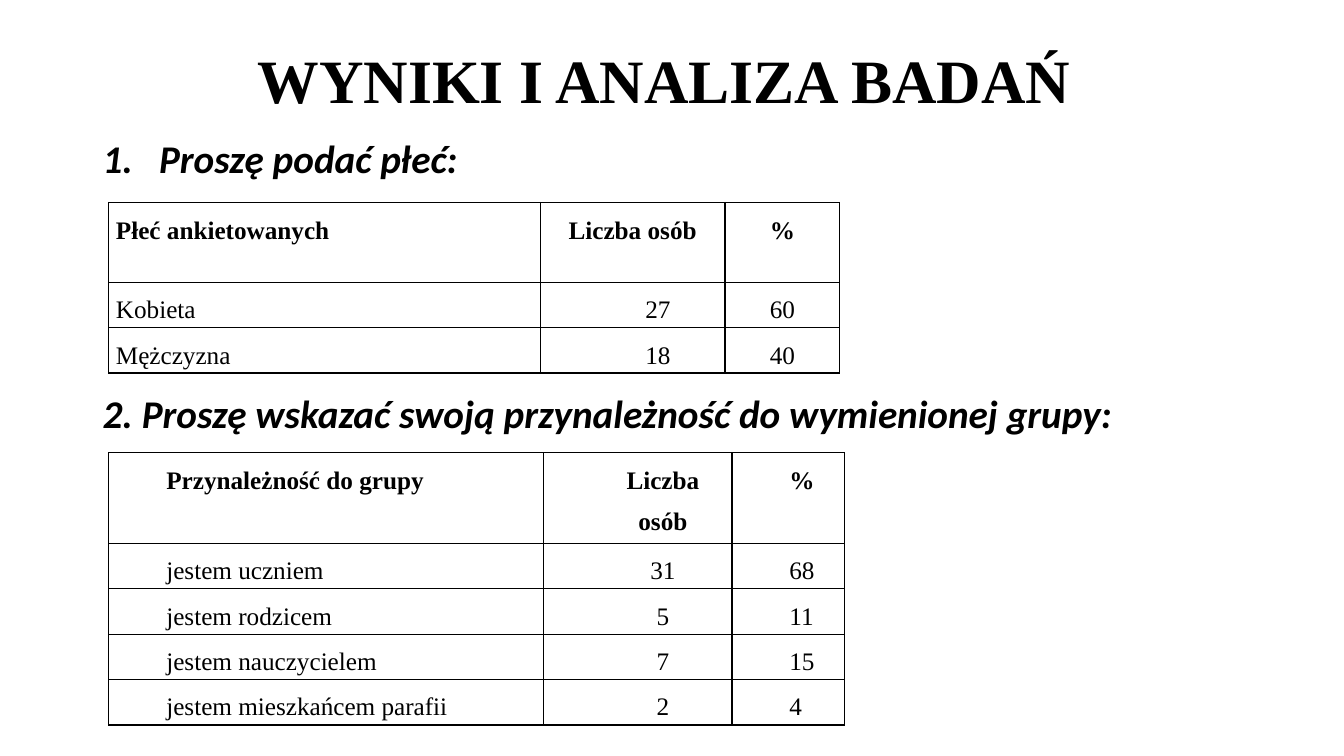
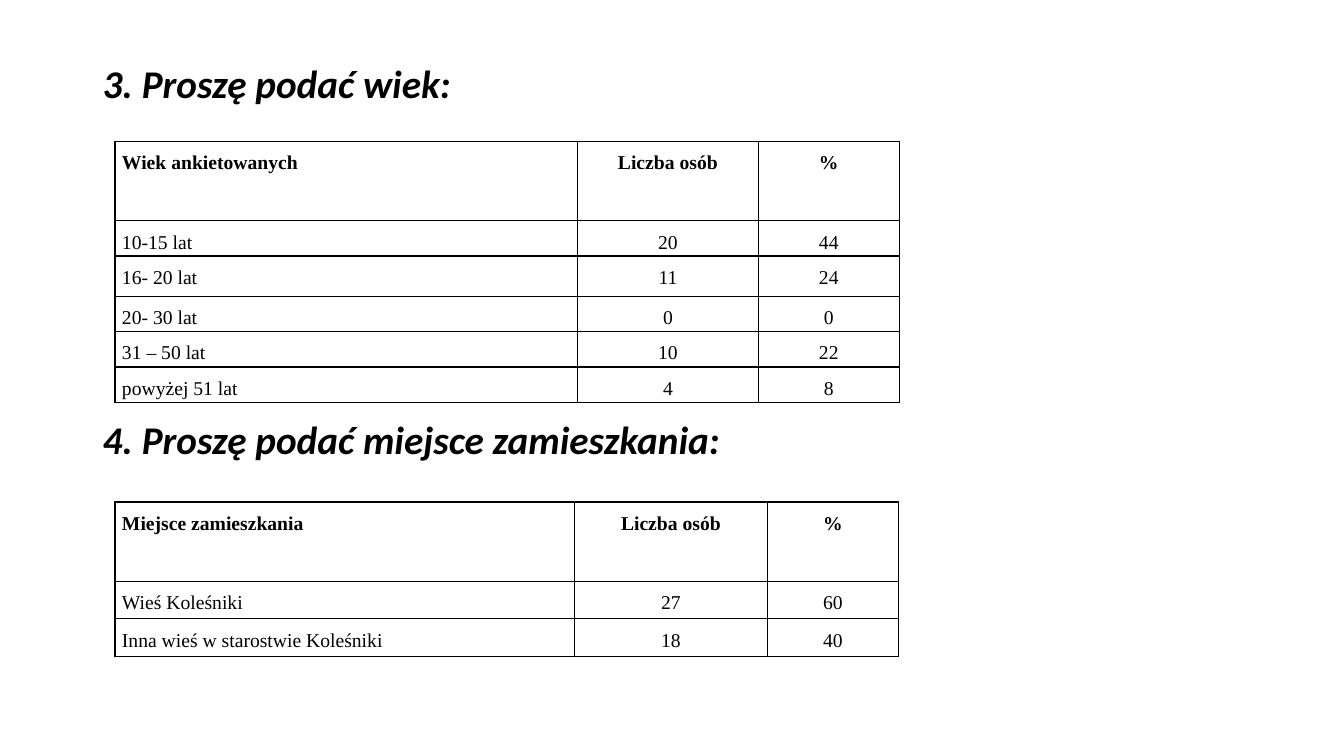
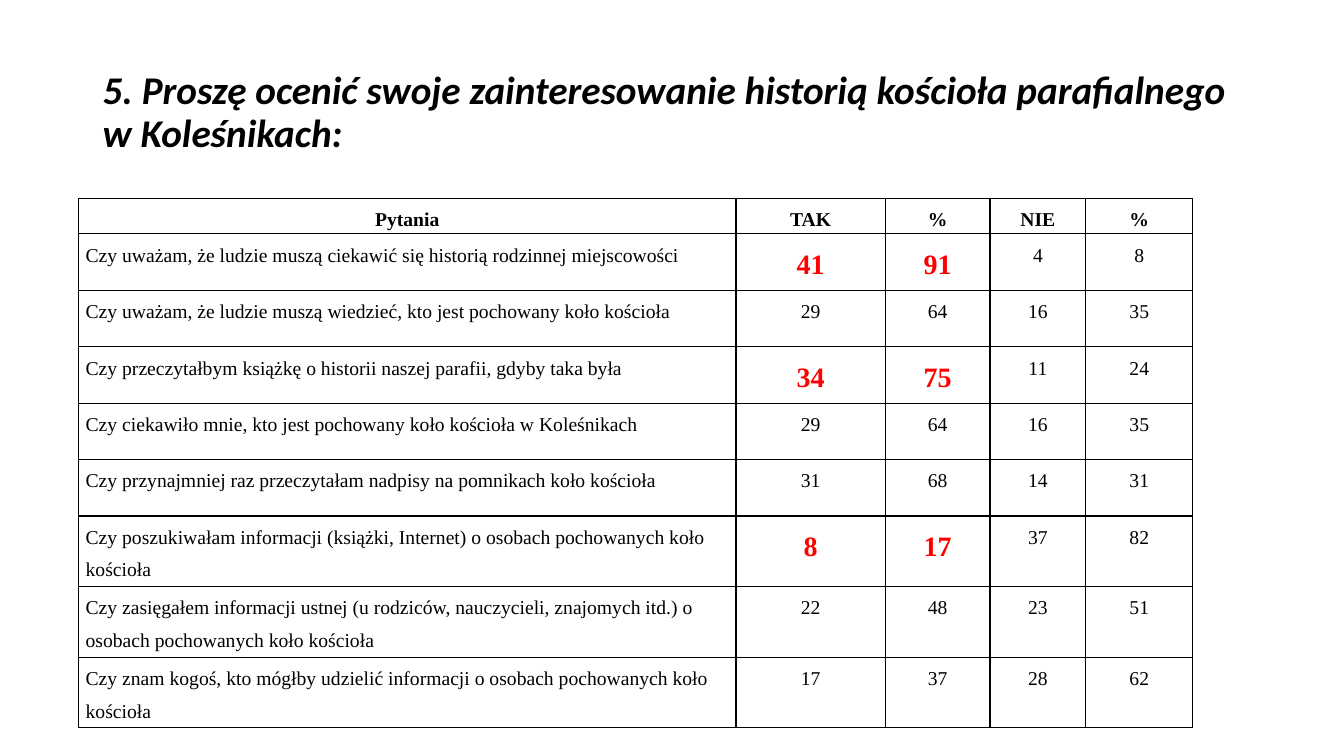
from pptx import Presentation
from pptx.dml.color import RGBColor
from pptx.enum.text import MSO_ANCHOR as Anchor, PP_ALIGN as Align
from pptx.oxml import parse_xml
from pptx.oxml.ns import nsdecls
from pptx.util import Inches, Pt

BLACK = RGBColor(0, 0, 0)
RED = RGBColor(255, 0, 0)
SERIF, SANS = "Times New Roman", "Calibri"
SIDES = {"l": Align.LEFT, "c": Align.CENTER}


class Deck:
    def __init__(self):
        self.prs = Presentation()
        self.prs.slide_width = Inches(13.33)
        self.prs.slide_height = Inches(7.5)

    def page(self):
        self.slide = self.prs.slides.add_slide(self.prs.slide_layouts[6])

    def style(self, para, face, size, color=BLACK, bold=True, slant=False):
        font = para.font
        font.name, font.size = face, Pt(size)
        font.bold, font.italic = bold, slant
        font.color.rgb = color

    def line(self, text, left, top, high):
        box = self.slide.shapes.add_textbox(
            Inches(left), Inches(top), Inches(11.5), Inches(high))
        frame = box.text_frame
        frame.word_wrap = True
        frame.vertical_anchor = Anchor.MIDDLE
        para = frame.paragraphs[0]
        para.text = text
        para.line_spacing = 0.9
        return para

    def title(self, text):
        para = self.line(text, 0.84, 0.4, 0.85)
        para.alignment = Align.CENTER
        self.style(para, SERIF, 44)

    def head(self, text, top, high=0.6, auto=False):
        para = self.line(text, 0.92, top, high)
        self.style(para, SANS, 28, slant=True)
        if auto:
            props = para._p.get_or_add_pPr()
            props.set("marL", str(Inches(0.56)))
            props.set("indent", str(-Inches(0.56)))
            mark = f'<a:buAutoNum {nsdecls("a")} type="arabicPeriod"/>'
            props.insert_element_before(parse_xml(mark), "a:defRPr")

    def edge(self, cell):
        props = cell._tc.get_or_add_tcPr()
        for side in "LRTB":
            props.append(parse_xml(
                f'<a:ln{side} {nsdecls("a")} w="12700"><a:solidFill>'
                f'<a:srgbClr val="{BLACK}"/></a:solidFill></a:ln{side}>'))
        cell.fill.background()

    def cell(self, cell, text, side, size, color, bold, pad):
        cell.margin_left = cell.margin_right = Inches(0.07)
        cell.margin_top = cell.margin_bottom = 0
        self.edge(cell)
        para = cell.text_frame.paragraphs[0]
        para.text = text
        para.alignment = SIDES[side]
        para.line_spacing = 1.5
        if pad:
            para._p.get_or_add_pPr().set("marL", str(Inches(0.5)))
        self.style(para, SERIF, size, color, bold)

    def table(self, left, top, cols, rows, data, size=14, sides="lcc",
              heads=None, hot=(), pad=lambda row, col: False):
        """Rows in hot show their second and third cells large and red."""
        grid = self.slide.shapes.add_table(
            len(rows), len(cols), Inches(left), Inches(top),
            Inches(sum(cols)), Inches(sum(rows))).table
        grid.first_row = grid.horz_banding = False
        for col, wide in zip(grid.columns, cols):
            col.width = Inches(wide)
        for row, high in zip(grid.rows, rows):
            row.height = Inches(high)
        for r, texts in enumerate(data):
            for c, text in enumerate(texts):
                side = (heads or sides)[c] if r == 0 else sides[c]
                loud = r in hot and c in (1, 2)
                self.cell(grid.cell(r, c), text, side, 20 if loud else size,
                          RED if loud else BLACK, loud or r == 0, pad(r, c))


def main():
    deck = Deck()

    # Sex and group
    deck.page()
    deck.title("WYNIKI I ANALIZA BADAŃ")
    deck.head("Proszę podać płeć:", 1.3, auto=True)
    deck.table(1.08, 2.01, [4.28, 1.83, 1.14], [0.79] + [0.4] * 2, [
        ("Płeć ankietowanych", "Liczba osób", "%"),
        ("Kobieta", "27", "60"),
        ("Mężczyzna", "18", "40"),
    ], size=18, pad=lambda row, col: row > 0 and col == 1)
    deck.head("2. Proszę wskazać swoją przynależność do wymienionej grupy:", 3.83)
    deck.table(1.08, 4.49, [4.31, 1.87, 1.12], [0.63] + [0.41] * 4, [
        ("Przynależność do grupy", "Liczba osób", "%"),
        ("jestem uczniem", "31", "68"),
        ("jestem rodzicem", "5", "11"),
        ("jestem nauczycielem", "7", "15"),
        ("jestem mieszkańcem parafii", "2", "4"),
    ], size=18, sides="lcl", pad=lambda row, col: True)

    # Age and home
    deck.page()
    deck.head("3. Proszę podać wiek:", 0.55)
    deck.table(1.14, 1.4, [4.59, 1.79, 1.4], [0.79, 0.34, 0.4] + [0.34] * 3, [
        ("Wiek ankietowanych", "Liczba osób", "%"),
        ("10-15 lat", "20", "44"),
        ("16- 20 lat", "11", "24"),
        ("20- 30 lat", "0", "0"),
        ("31 – 50 lat", "10", "22"),
        ("powyżej 51 lat", "4", "8"),
    ])
    deck.head("4. Proszę podać miejsce zamieszkania:", 4.08)
    deck.table(1.14, 4.98, [4.56, 1.91, 1.3], [0.79] + [0.37] * 2, [
        ("Miejsce zamieszkania", "Liczba osób", "%"),
        ("Wieś Koleśniki", "27", "60"),
        ("Inna wieś w starostwie Koleśniki", "18", "40"),
    ])

    # Interest in the church
    deck.page()
    deck.head("5. Proszę ocenić swoje zainteresowanie historią kościoła "
              "parafialnego w Koleśnikach:", 0.4, 1.45)
    deck.table(0.78, 1.97, [6.52, 1.48, 1.04, 0.95, 1.06], [0.27] + [0.56] * 8, [
        ("Pytania", "TAK", "%", "NIE", "%"),
        ("Czy uważam, że ludzie muszą ciekawić się historią rodzinnej "
         "miejscowości", "41", "91", "4", "8"),
        ("Czy uważam, że ludzie muszą wiedzieć, kto jest pochowany koło "
         "kościoła", "29", "64", "16", "35"),
        ("Czy przeczytałbym książkę o historii naszej parafii, gdyby taka "
         "była", "34", "75", "11", "24"),
        ("Czy ciekawiło mnie, kto jest pochowany koło kościoła w "
         "Koleśnikach", "29", "64", "16", "35"),
        ("Czy przynajmniej raz przeczytałam nadpisy na pomnikach koło "
         "kościoła", "31", "68", "14", "31"),
        ("Czy poszukiwałam informacji (książki, Internet) o osobach "
         "pochowanych koło kościoła", "8", "17", "37", "82"),
        ("Czy zasięgałem informacji ustnej (u rodziców, nauczycieli, "
         "znajomych itd.) o osobach pochowanych koło kościoła",
         "22", "48", "23", "51"),
        ("Czy znam kogoś, kto mógłby udzielić informacji o osobach "
         "pochowanych koło kościoła", "17", "37", "28", "62"),
    ], sides="lcccc", heads="ccccc", hot=(1, 3, 6))

    deck.prs.save("out.pptx")


if __name__ == "__main__":
    main()
